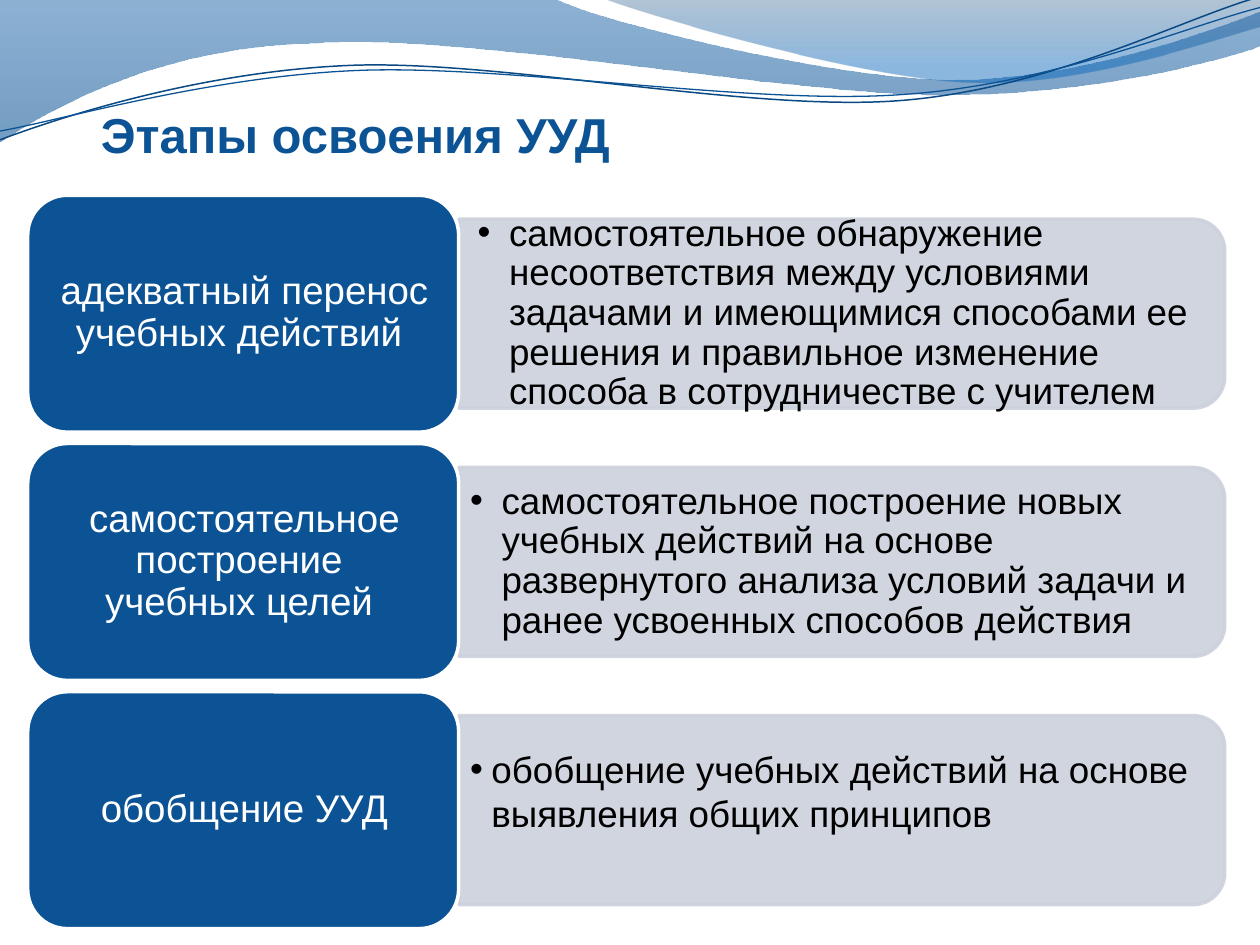
from lxml import etree
from pptx import Presentation
from pptx.dml.color import RGBColor
from pptx.enum.shapes import MSO_SHAPE
from pptx.enum.text import MSO_ANCHOR, PP_ALIGN
from pptx.oxml.ns import qn
from pptx.util import Inches, Pt

ROUNDED = MSO_SHAPE.ROUNDED_RECTANGLE
TWO_ROUNDED = MSO_SHAPE.ROUND_2_SAME_RECTANGLE
LEFT, CENTER = PP_ALIGN.LEFT, PP_ALIGN.CENTER
MIDDLE, BOTTOM = MSO_ANCHOR.MIDDLE, MSO_ANCHOR.BOTTOM

BLUE, PALE, WHITE, BLACK = "0B5394", "CCD1DC", "FFFFFF", "000000"

# Each path is a start point, then lines (x, y) or Bezier curves (two controls and an end).
WIDE_WAVE = [(0, 0), (4.4, -0.01),
             (4.76, 0.17, 6.64, 0.63, 7.58, 0.63), (8.53, 0.63, 9.58, 0.26, 10, 0.09),
             (10.01, 0.36),
             (9.83, 0.44, 8.7, 0.76, 7.46, 0.75), (6.22, 0.75, 3.82, 0.28, 2.57, 0.34),
             (1.29, 0.36, 0.46, 0.83, -0.01, 1.13)]
RIGHT_WAVE = [(4.79, -0.01), (5.09, 0.11, 6.82, 0.62, 7.69, 0.65),
              (8.56, 0.69, 9.61, 0.32, 10, 0.21), (10, 0)]
UPPER_LINE = [(0, 1.11), (0.48, 0.93, 1.58, 0.57, 2.77, 0.52),
              (3.95, 0.47, 5.93, 0.89, 7.13, 0.8), (8.33, 0.71, 9.38, 0.15, 9.98, -0.02)]
LOWER_LINE = [(0, 1.04), (0.47, 0.96, 1.64, 0.61, 2.83, 0.56),
              (4.03, 0.51, 5.97, 0.84, 7.17, 0.75), (8.36, 0.67, 9.41, 0.21, 10, 0.06)]

# Stage label, description, and the description's insets, indent and line spacing
STAGES = [
    ("адекватный перенос учебных действий ",
     "самостоятельное обнаружение несоответствия между условиями задачами и имеющимися "
     "способами ее решения и правильное изменение способа в сотрудничестве с учителем",
     (0.15, 0.07, 0.15, 0.07), 0.25, 0.9),
    ("самостоятельное построение \vучебных целей ",
     "самостоятельное построение новых учебных действий на основе развернутого анализа "
     "условий задачи и ранее усвоенных способов действия",
     (0.09, 0.04, 0.09, 0.04), 0.25, 0.9),
    ("обобщение УУД",
     "обобщение учебных действий на основе\vвыявления общих принципов",
     (0.09, 0.04, 0.09, 0.34), 0.17, 1.0),
]
ROW_TOP, ROW_PITCH = 1.55, 1.97


def color(value):
    return RGBColor.from_string(value)


def set_alpha(color_element, percent):
    alpha = etree.SubElement(color_element, qn("a:alpha"))
    alpha.set("val", str(percent * 1000))


def bend(shape, segments):
    """Turn the straight segments that have control points into Bezier curves."""
    lines = shape._element.spPr.findall(".//" + qn("a:lnTo"))
    for line, segment in zip(lines, segments):
        if len(segment) == 2:
            continue
        curve = etree.Element(qn("a:cubicBezTo"))
        for x, y in zip(segment[::2], segment[1::2]):
            etree.SubElement(curve, qn("a:pt"), x=str(Inches(x) - shape.left),
                             y=str(Inches(y) - shape.top))
        line.getparent().replace(line, curve)


class Page:
    def __init__(self, slide, font="Arial"):
        self.slide = slide
        self.font = font

    def outline(self, path, closed):
        start, *ends = [tuple(map(Inches, segment[-2:])) for segment in path]
        builder = self.slide.shapes.build_freeform(*start)
        builder.add_line_segments(ends, close=closed)
        shape = builder.convert_to_shape()
        shape.shadow.inherit = False
        bend(shape, path[1:])
        return shape

    def wave(self, path, stops):
        """Add a gradient area; stops are (position, colour, opacity percent)."""
        shape = self.outline(path, True)
        shape.line.fill.background()
        shape.fill.gradient()
        shape.fill.gradient_angle = 270
        for stop, (position, value, _) in zip(shape.fill.gradient_stops, stops):
            stop.position = position
            stop.color.rgb = color(value)
        elements = shape._element.spPr.findall(".//" + qn("a:srgbClr"))
        for element, (_, _, opacity) in zip(elements, stops):
            set_alpha(element, opacity)

    def curve(self, path, value, width):
        shape = self.outline(path, False)
        shape.fill.background()
        shape.line.color.rgb = color(value)
        shape.line.width = Pt(width)

    def panel(self, kind, frame, fill, line, rotation=0, opacity=100):
        shape = self.slide.shapes.add_shape(kind, *map(Inches, frame))
        shape.shadow.inherit = False
        shape.rotation = rotation
        shape.fill.solid()
        shape.fill.fore_color.rgb = color(fill)
        shape.line.color.rgb = color(line)
        shape.line.width = Pt(2)
        if opacity < 100:
            for element in shape._element.spPr.findall(".//" + qn("a:srgbClr")):
                set_alpha(element, opacity)

    def text(self, words, frame, size, value, insets, align=LEFT, anchor=MIDDLE,
             spacing=1.0, bold=False, bullet_indent=None):
        box = self.slide.shapes.add_textbox(*map(Inches, frame))
        text = box.text_frame
        text.word_wrap = True
        text.vertical_anchor = anchor
        (text.margin_left, text.margin_top,
         text.margin_right, text.margin_bottom) = map(Inches, insets)
        para = text.paragraphs[0]
        para.text = words
        para.alignment = align
        para.line_spacing = spacing
        para.font.name = self.font
        para.font.size = Pt(size)
        para.font.bold = bold
        para.font.color.rgb = color(value)
        if bullet_indent:
            properties = para._p.get_or_add_pPr()
            properties.set("marL", str(Inches(bullet_indent)))
            properties.set("indent", str(-Inches(bullet_indent)))
            defaults = properties.find(qn("a:defRPr"))
            defaults.addprevious(etree.Element(qn("a:buFont"), typeface=self.font))
            defaults.addprevious(etree.Element(qn("a:buChar"), char="•"))


def main():
    deck = Presentation()
    deck.slide_width, deck.slide_height = Inches(10), Inches(7.5)
    page = Page(deck.slides.add_slide(deck.slide_layouts[6]))

    page.wave(WIDE_WAVE, [(0, "00539E", 45), (1, "004C90", 55)])
    page.wave(RIGHT_WAVE, [(0, "003E76", 30), (0.8, "0063BC", 45)])
    page.curve(UPPER_LINE, "0A4983", 0.85)
    page.curve(LOWER_LINE, BLUE, 0.75)
    page.text("Этапы освоения УУД", (0.8, 0.05, 9, 1.25), 28, BLUE,
              (0, 0.05, 0, 0), anchor=BOTTOM, bold=True)

    for row, (label, description, insets, indent, spacing) in enumerate(STAGES):
        top = ROW_TOP + row * ROW_PITCH
        page.panel(TWO_ROUNDED, (5.93, top - 2.1, 1.5, 6.08), PALE, PALE,
                   rotation=90, opacity=90)
        page.text(description, (3.64, top + 0.26, 6.01, 1.36), 21, BLACK, insets,
                  spacing=spacing, bullet_indent=indent)
        page.panel(ROUNDED, (0.22, top, 3.42, 1.88), BLUE, WHITE)
        page.text(label, (0.32, top + 0.09, 3.24, 1.69), 22, WHITE,
                  (0.09, 0.05, 0.09, 0.05), align=CENTER, spacing=0.9)

    deck.save("out.pptx")


if __name__ == "__main__":
    main()
